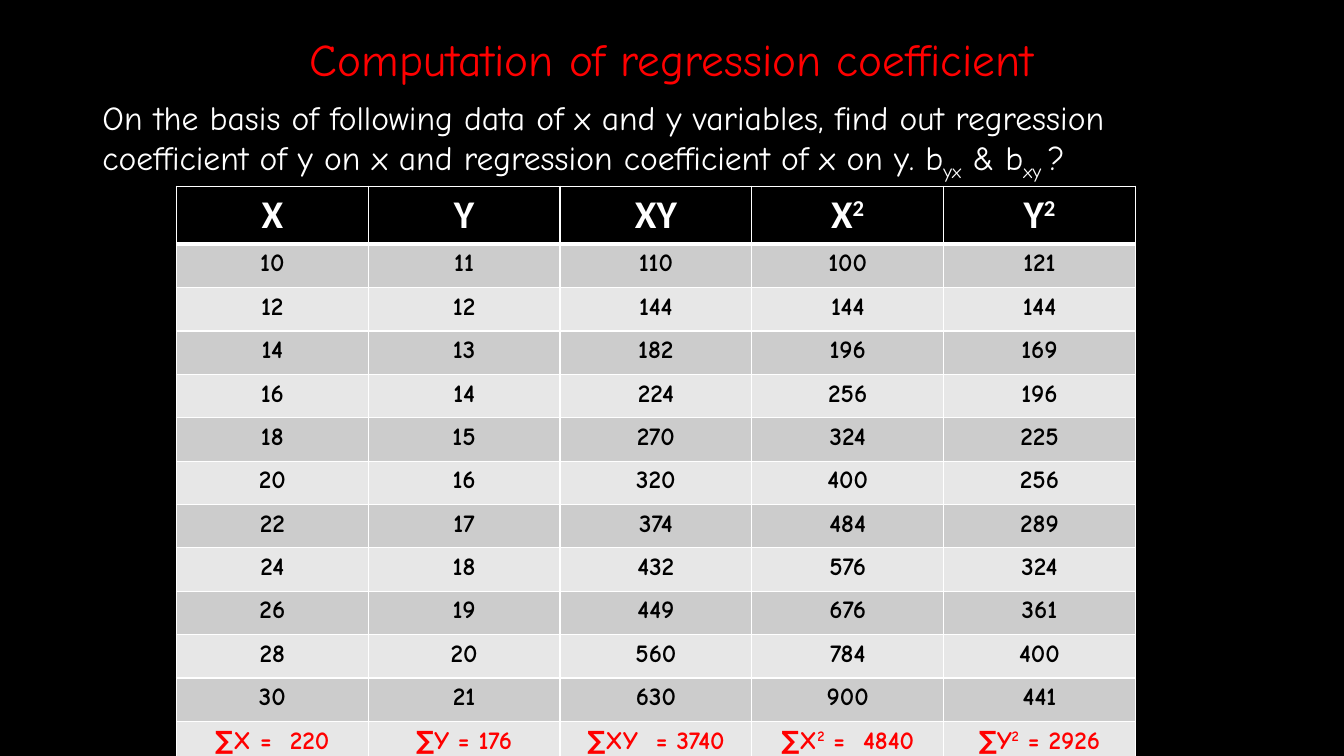
from dataclasses import dataclass
from typing import Any

import pptx
import pptx.dml.color
import pptx.enum.text
import pptx.oxml
import pptx.oxml.ns
import pptx.util


@dataclass(frozen=True)
class Theme:
    black: str = "000000"
    white: str = "FFFFFF"
    red: str = "FF0000"
    dark_band: str = "CCCCCC"
    light_band: str = "E7E7E7"
    hand_font: str = "Comic Neue"
    head_font: str = "Calibri"
    title_size: float = 32.4
    body_size: float = 24
    head_size: float = 28
    cell_size: float = 18
    thin_line: float = 1
    thick_line: float = 3


@dataclass(frozen=True)
class Span:
    text: str
    baseline: int = 0  # percent above or below the line


@dataclass(frozen=True)
class Row:
    cells: list[list[Span]]
    height: int
    fill: str
    font: str
    size: float
    color: str
    top_line: float
    bottom_line: float


THEME = Theme()
PX = 6350  # 144 px to the inch
COLUMN_WIDTH, HEAD_HEIGHT, ROW_HEIGHT = 274, 75, 62
CENTER = pptx.enum.text.PP_ALIGN.CENTER
LEFT = pptx.enum.text.PP_ALIGN.LEFT
SQUARE = Span("2", 30)

QUESTION = [
    Span("On the basis of following data of x and y variables, find out regression "
         "coefficient of y on x and regression coefficient of x on y. b"),
    Span("yx", -25), Span(" & b"), Span("xy ", -25), Span("?"),
]
HEADINGS = [[Span("X")], [Span("Y")], [Span("XY")], [Span("X"), SQUARE], [Span("Y"), SQUARE]]
DATA = [
    (10, 11, 110, 100, 121),
    (12, 12, 144, 144, 144),
    (14, 13, 182, 196, 169),
    (16, 14, 224, 256, 196),
    (18, 15, 270, 324, 225),
    (20, 16, 320, 400, 256),
    (22, 17, 374, 484, 289),
    (24, 18, 432, 576, 324),
    (26, 19, 449, 676, 361),
    (28, 20, 560, 784, 400),
    (30, 21, 630, 900, 441),
]
TOTALS = [
    [Span("∑X =  220")],
    [Span("∑Y = 176")],
    [Span("∑XY  = 3740")],
    [Span("∑X"), SQUARE, Span(" =  4840")],
    [Span("∑Y"), SQUARE, Span(" = 2926")],
]


def px(length: int) -> int:
    return pptx.util.Emu(length * PX)


def rgb(color: str) -> pptx.dml.color.RGBColor:
    return pptx.dml.color.RGBColor.from_string(color)


def write(frame: Any, spans: list[Span], *, font: str, size: float, color: str,
          bold: bool = False, align: Any = CENTER, spacing: float = 1.0) -> None:
    para = frame.paragraphs[0]
    para.alignment = align
    para.line_spacing = spacing
    para.space_before = pptx.util.Pt(0)
    for span in spans:
        run = para.add_run()
        run.text = span.text
        run.font.name = font
        run.font.size = pptx.util.Pt(size)
        run.font.bold = bold
        run.font.color.rgb = rgb(color)
        if span.baseline:
            run._r.get_or_add_rPr().set("baseline", str(span.baseline * 1000))


def fill_placeholder(box: Any, spans: list[Span], left: int, top: int, width: int,
                     height: int, *, anchor: Any, **text_format: Any) -> None:
    box.left, box.top, box.width, box.height = map(px, (left, top, width, height))
    frame = box.text_frame
    frame.word_wrap = True
    frame.auto_size = pptx.enum.text.MSO_AUTO_SIZE.NONE
    frame.vertical_anchor = anchor
    properties = frame.paragraphs[0]._p.get_or_add_pPr()
    properties.set("marL", "0")
    properties.set("indent", "0")
    properties.append(pptx.oxml.parse_xml(f"<a:buNone {pptx.oxml.ns.nsdecls('a')}/>"))
    write(frame, spans, **text_format)


def set_borders(cell: Any, top: float, bottom: float) -> None:
    properties = cell._tc.get_or_add_tcPr()
    sides = {"lnL": THEME.thin_line, "lnR": THEME.thin_line, "lnT": top, "lnB": bottom}
    for index, (side, points) in enumerate(sides.items()):
        properties.insert(index, pptx.oxml.parse_xml(
            f'<a:{side} {pptx.oxml.ns.nsdecls("a")} w="{pptx.util.Pt(points)}">'
            f'<a:solidFill><a:srgbClr val="{THEME.white}"/></a:solidFill></a:{side}>'))


def table_rows() -> list[Row]:
    thin, thick = THEME.thin_line, THEME.thick_line
    rows = [Row(HEADINGS, HEAD_HEIGHT, THEME.black, THEME.head_font, THEME.head_size,
                THEME.white, thin, thick)]
    values = [[[Span(str(number))] for number in numbers] for numbers in DATA]
    for index, cells in enumerate(values + [TOTALS]):
        rows.append(Row(
            cells, ROW_HEIGHT,
            fill=THEME.light_band if index % 2 else THEME.dark_band,
            font=THEME.hand_font, size=THEME.cell_size,
            color=THEME.red if cells is TOTALS else THEME.black,
            top_line=thin if index else thick, bottom_line=thin))
    return rows


def add_data_table(page: Any, left: int, top: int) -> None:
    rows = table_rows()
    columns = len(HEADINGS)
    height = sum(row.height for row in rows)
    table = page.shapes.add_table(len(rows), columns, px(left), px(top),
                                  px(columns * COLUMN_WIDTH), px(height)).table
    table.horz_banding = False
    for column in table.columns:
        column.width = px(COLUMN_WIDTH)
    for row_index, row in enumerate(rows):
        table.rows[row_index].height = px(row.height)
        for column_index, spans in enumerate(row.cells):
            cell = table.cell(row_index, column_index)
            cell.fill.solid()
            cell.fill.fore_color.rgb = rgb(row.fill)
            set_borders(cell, row.top_line, row.bottom_line)
            write(cell.text_frame, spans, font=row.font, size=row.size,
                  color=row.color, bold=True)


def main() -> None:
    deck = pptx.Presentation()
    deck.slide_width, deck.slide_height = px(1920), px(1080)
    page = deck.slides.add_slide(deck.slide_layouts[1])
    page.background.fill.solid()
    page.background.fill.fore_color.rgb = rgb(THEME.black)

    # Title and question
    fill_placeholder(page.shapes.title, [Span("Computation of regression coefficient")],
                     132, 58, 1656, 62, anchor=pptx.enum.text.MSO_ANCHOR.MIDDLE,
                     font=THEME.hand_font, size=THEME.title_size, color=THEME.red,
                     spacing=0.9)
    fill_placeholder(page.placeholders[1], QUESTION,
                     132, 137, 1656, 886, anchor=pptx.enum.text.MSO_ANCHOR.TOP,
                     font=THEME.hand_font, size=THEME.body_size, color=THEME.white,
                     align=LEFT, spacing=0.9)

    # Data with totals
    add_data_table(page, 252, 266)
    deck.save("out.pptx")


if __name__ == "__main__":
    main()
